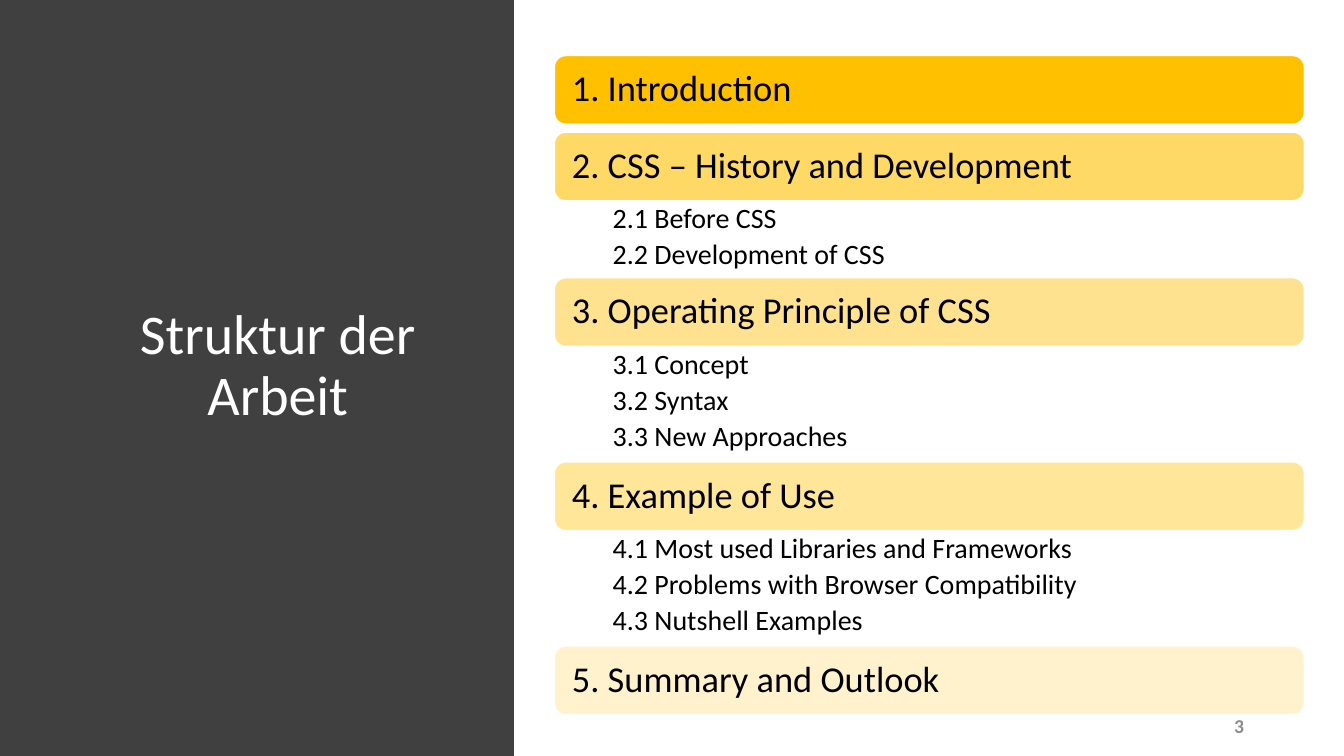
import pptx
import pptx.dml.color
import pptx.enum.shapes
import pptx.enum.text
import pptx.util

Cm = pptx.util.Cm
Pt = pptx.util.Pt
Kind = pptx.enum.shapes.MSO_SHAPE
Align = pptx.enum.text.PP_ALIGN
Anchor = pptx.enum.text.MSO_ANCHOR


def tint(code):
    return pptx.dml.color.RGBColor.from_string(code)


def apply(target, values):
    for name, value in values.items():
        setattr(target, name, value)


class Deck:
    font = "Calibri"

    def __init__(self, wide, high):
        self.file = pptx.Presentation()
        apply(self.file, {"slide_width": Cm(wide), "slide_height": Cm(high)})
        self.slide = self.file.slides.add_slide(self.file.slide_layouts[6])

    def block(self, kind, box, fill, line=None):
        shape = self.slide.shapes.add_shape(kind, *map(Cm, box))
        shape.shadow.inherit = False
        shape.fill.solid()
        shape.fill.fore_color.rgb = tint(fill)
        if line:
            shape.line.color.rgb = tint(line)
            shape.line.width = Pt(1)
        else:
            shape.line.fill.background()
        return shape

    def letter(self, shape, lines, size, color="000000", frame=None, para=None, bold=False):
        text = shape.text_frame
        apply(text, {"word_wrap": True, "vertical_anchor": Anchor.MIDDLE, **(frame or {})})
        text.text = "\n".join(lines)
        for item in text.paragraphs:
            apply(item, {"alignment": Align.LEFT, "line_spacing": 0.9, **(para or {})})
            apply(item.font, {"name": self.font, "size": Pt(size), "bold": bold})
            item.font.color.rgb = tint(color)

    def label(self, box, lines, size, **style):
        self.letter(self.slide.shapes.add_textbox(*map(Cm, box)), lines, size, **style)


# Chapters: heading, bar colour, sections
PARTS = [
    ("1. Introduction", "FFC000", []),
    ("2. CSS – History and Development", "FFD966",
     ["2.1 Before CSS", "2.2 Development of CSS"]),
    ("3. Operating Principle of CSS", "FFE28F",
     ["3.1 Concept", "3.2 Syntax", "3.3 New Approaches"]),
    ("4. Example of Use", "FFE699",
     ["4.1 Most used Libraries and Frameworks",
      "4.2 Problems with Browser Compatibility",
      "4.3 Nutshell Examples"]),
    ("5. Summary and Outlook", "FFF2CC", []),
]
LEFT, WIDE, BAR = 13.97, 18.9, 1.73
GAP, STEP = 0.2, 0.97


def main():
    deck = Deck(33.87, 19.05)

    # Dark side panel with title
    deck.block(Kind.RECTANGLE, (0, 0, 12.95, 19.05), "404040")
    deck.label((2.34, 1.73, 9.32, 15.04), ["Struktur der Arbeit"], 40,
               color="FFFFFF", para={"alignment": Align.CENTER})

    # Chapter bars with their sections below
    top = 1.4
    for head, fill, subs in PARTS:
        bar = deck.block(Kind.ROUNDED_RECTANGLE, (LEFT, top, WIDE, BAR), fill, "FFFFFF")
        deck.letter(bar, [head], 26, frame={"margin_left": Cm(0.36)})
        top += BAR
        space = STEP * len(subs) or GAP
        if subs:
            deck.label((LEFT, top, WIDE, space), subs, 20,
                       frame={"vertical_anchor": Anchor.TOP, "margin_left": Cm(1.47),
                              "margin_top": Cm(0.1), "margin_bottom": Cm(0.1)},
                       para={"space_after": Pt(4)})
        top += space

    # Page number
    deck.label((23.98, 17.78, 7.62, 1.01), ["3"], 14, color="8C8C8C", bold=True,
               para={"alignment": Align.RIGHT, "line_spacing": 1.0})

    deck.file.save("out.pptx")


if __name__ == "__main__":
    main()
